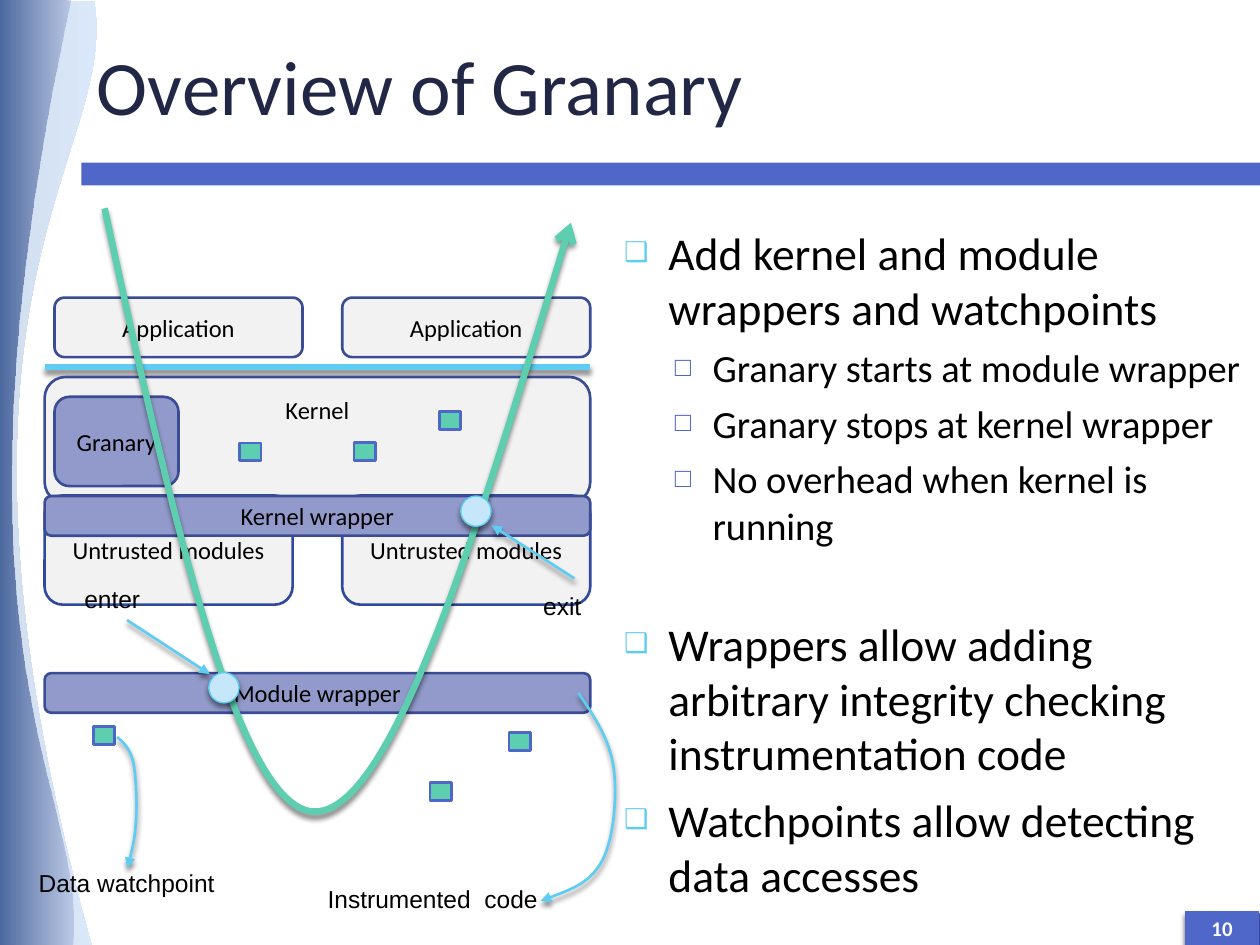
import pptx
import pptx.dml.color
import pptx.enum.shapes
import pptx.enum.text
import pptx.oxml
import pptx.oxml.ns
import pptx.util
import lxml.etree

Cm, Pt = pptx.util.Cm, pptx.util.Pt
RGBColor = pptx.dml.color.RGBColor
MSO_SHAPE = pptx.enum.shapes.MSO_SHAPE
PP_ALIGN = pptx.enum.text.PP_ALIGN
MSO_ANCHOR = pptx.enum.text.MSO_ANCHOR
qn = pptx.oxml.ns.qn

BLACK, WHITE = RGBColor(0, 0, 0), RGBColor(255, 255, 255)
NAVY = RGBColor(0x21, 0x27, 0x45)
BLUE = RGBColor(0x4E, 0x67, 0xC8)
PALE_BLUE = RGBColor(0xC2, 0xC7, 0xE6)
OUTLINE = RGBColor(0x3A, 0x4C, 0x94)
MODULE_OUTLINE = RGBColor(0x31, 0x48, 0x9F)
LAVENDER = RGBColor(0x91, 0x9A, 0xCA)
GRAY = RGBColor(0xF2, 0xF2, 0xF2)
SKY = RGBColor(0x5E, 0xCC, 0xF3)
PALE_SKY = RGBColor(0xC5, 0xE7, 0xF9)
GREEN = RGBColor(0x5D, 0xCE, 0xAF)
WAVE_DARK = RGBColor(0x00, 0x31, 0x71)
WAVE_LIGHT = RGBColor(0x65, 0xA8, 0xFF)
WAVE_INDIGO = RGBColor(0x37, 0x4A, 0x92)

TITLE = "Overview of Granary"
BULLETS = [
    (0, "Add kernel and module wrappers and watchpoints", 7),
    (1, "Granary starts at module wrapper", 5.5),
    (1, "Granary stops at kernel wrapper", 5.5),
    (1, "No overhead when kernel is running", 5.5),
    (0, "Wrappers allow adding arbitrary integrity checking instrumentation code", 39),
    (0, "Watchpoints allow detecting data accesses", 7),
]
LEVELS = [
    dict(size=26, margin=0.89, hanging=0.89, mark="❑", color=SKY, scale=60),
    dict(size=22, margin=1.78, hanging=0.76, mark="□", color=BLUE, scale=70),
]
LEFT, RIGHT = 0.9, 6.9
BOXES = [
    ("Kernel", (LEFT, 7.6, 11, 2.54), GRAY, OUTLINE),
    ("Granary", (1.1, 8, 2.5, 1.8), LAVENDER, OUTLINE),
    ("Untrusted modules", (RIGHT, 9.99, 5, 2.2), GRAY, MODULE_OUTLINE),
    ("Application", (1.1, 6, 5, 1.2), GRAY, OUTLINE),
    ("Application", (RIGHT, 6, 5, 1.2), GRAY, OUTLINE),
    ("Untrusted modules", (LEFT, 9.99, 5, 2.2), GRAY, MODULE_OUTLINE),
    ("Module wrapper", (LEFT, 13.57, 11, 0.8), LAVENDER, OUTLINE),
    ("Kernel wrapper", (LEFT, 10, 11, 0.8), LAVENDER, OUTLINE),
]
CROSSINGS = [(4.21, 13.56), (9.29, 10)]
WATCHPOINTS = [(8.86, 8.3), (7.14, 8.92), (4.83, 8.93), (10.26, 14.77), (8.67, 15.78), (1.88, 14.65)]
LABELS = [
    ("enter", (1.45, 11.64, 2.59, 1.02), PP_ALIGN.LEFT),
    ("exit", (10.7, 11.78, 2.79, 1.02), PP_ALIGN.LEFT),
    ("Instrumented  code", (6.31, 17.7, 4.83, 0.86), PP_ALIGN.CENTER),
    ("Data watchpoint", (0.14, 17.37, 4.83, 0.86), PP_ALIGN.CENTER),
]
BOUNDARY = ((LEFT, 7.4), (11.9, 7.4))
POINTERS = [((2.56, 12.5), (4.23, 13.59)), ((11.58, 11.66), (9.91, 10.59))]
EXECUTION = [(2.11, 4.2), (3.43, 10.26), (4.78, 16.31), (6.33, 16.36),
             (7.9, 16.41), (9.7, 10.44), (11.51, 4.49)]
CODE_ARROW = [(11.66, 13.97), (11.99, 14.45), (12.29, 14.91), (12.37, 15.47), (12.45, 16.05),
              (12.37, 16.92), (12.14, 17.35), (11.89, 17.81), (11.38, 17.98), (10.9, 18.16)]
DATA_ARROW = [(2.36, 14.86), (2.49, 14.96), (2.62, 15.09), (2.69, 15.37), (2.74, 15.65),
              (2.77, 16.21), (2.74, 16.56), (2.72, 16.92), (2.64, 17.22), (2.57, 17.5)]
WAVES = [
    ([(1.9, 0.03), (2.41, 3.23), (-1.85, 5.74), (1.88, 19.18)], [(WAVE_DARK, 21), (WAVE_LIGHT, 21)]),
    ([(1.42, 0), (-1.42, 13.44), (1.83, 15.95), (1.45, 19.15)], [(WAVE_DARK, 73), (WAVE_INDIGO, 17)]),
]


def lengths(values):
    return [Cm(value) for value in values]


def child(parent, tag, **attributes):
    return lxml.etree.SubElement(parent, qn(tag), {k: str(v) for k, v in attributes.items()})


def add_effects(shape, shadow):
    effects = child(shape._element.spPr, "a:effectLst")
    if shadow:
        outer = child(effects, "a:outerShdw", blurRad=Pt(3), dist=Pt(2.4), dir=5400000, rotWithShape=0)
        child(child(outer, "a:srgbClr", val="000000"), "a:alpha", val=45000)


def style_line(shape, color, width, arrow=None):
    shape.line.color.rgb = color
    shape.line.width = Pt(width)
    if arrow:
        child(shape.line._get_or_add_ln(), "a:tailEnd", type=arrow)


def add_box(kind, box, fill, line=None, width=1.5, shadow=False):
    shape = slide.shapes.add_shape(kind, *lengths(box))
    shape.fill.solid()
    shape.fill.fore_color.rgb = fill
    if line is None:
        shape.line.fill.background()
    else:
        style_line(shape, line, width)
    add_effects(shape, shadow)
    return shape


def write(shape, text, size, color=BLACK, font="Calibri", align=PP_ALIGN.CENTER, bold=False):
    frame = shape.text_frame
    frame.word_wrap = True
    frame.text = text
    paragraph = frame.paragraphs[0]
    paragraph.alignment = align
    style_font(paragraph, size, color, font, bold)


def style_font(paragraph, size, color, name="Calibri", bold=False):
    font = paragraph.font
    font.size, font.name, font.bold = Pt(size), name, bold
    font.color.rgb = color


def add_outline(controls, before=(), after=()):
    points = [lengths(point) for point in [*before, *controls, *after]]
    builder = slide.shapes.build_freeform(*points[0], scale=1.0)
    builder.add_line_segments(points[1:], close=bool(after))
    shape = builder.convert_to_shape()
    geometry = next(shape._element.iter(qn("a:path")))
    segments = geometry.findall(qn("a:lnTo"))[len(before):]
    for start in range(0, len(controls) - 1, 3):
        curve = lxml.etree.Element(qn("a:cubicBezTo"))
        segments[start].addprevious(curve)
        for segment in segments[start:start + 3]:
            curve.append(segment[0])
            geometry.remove(segment)
    return shape


def add_curve(controls, color, width, arrow):
    shape = add_outline(controls)
    shape.fill.background()
    style_line(shape, color, width, arrow)
    add_effects(shape, True)


def add_line(start, end, width, arrow=None):
    line = slide.shapes.add_connector(pptx.enum.shapes.MSO_CONNECTOR.STRAIGHT, *lengths(start + end))
    style_line(line, SKY, width, arrow)
    add_effects(line, True)


def place(shape, box):
    shape.left, shape.top, shape.width, shape.height = lengths(box)
    slide.shapes._spTree.append(shape._element)


presentation = pptx.Presentation()
presentation.slide_width, presentation.slide_height = Cm(25.4), Cm(19.05)
slide = presentation.slides.add_slide(presentation.slide_layouts[1])
title, body = slide.placeholders

add_box(MSO_SHAPE.RECTANGLE, (23.93, 18.42, 1.47, 0.63), PALE_BLUE, BLUE, 0.79, True)
add_box(MSO_SHAPE.RECTANGLE, (1.64, 3.28, 23.76, 0.46), BLUE)
for edge, colors in WAVES:
    wave = add_outline(edge, before=[(0, 0)], after=[(0, 19.18)])
    wave.fill.gradient()
    wave.fill.gradient_angle = 0
    for stop, (color, opacity) in zip(wave.fill.gradient_stops, colors):
        stop.color.rgb = color
        child(stop._gs[0], "a:alpha", val=opacity * 1000)
    wave.line.fill.background()
    add_effects(wave, False)

place(title, (1.7, 0.33, 22.66, 2.74))
write(title, TITLE, 44, NAVY, align=PP_ALIGN.LEFT)
title.text_frame.vertical_anchor = MSO_ANCHOR.MIDDLE

place(body, (12.33, 4.41, 12.98, 12.7))
body.text_frame.text = "\n".join(text for _, text, _ in BULLETS)
body.text_frame.auto_size = pptx.enum.text.MSO_AUTO_SIZE.NONE
for paragraph, (depth, _, gap) in zip(body.text_frame.paragraphs, BULLETS):
    level = LEVELS[depth]
    paragraph.level = depth
    paragraph.space_before = Pt(gap)
    properties = paragraph._p.get_or_add_pPr()
    properties.set("marL", str(Cm(level["margin"])))
    properties.set("indent", str(-Cm(level["hanging"])))
    child(child(properties, "a:buClr"), "a:srgbClr", val=level["color"])
    child(properties, "a:buSzPct", val=level["scale"] * 1000)
    child(properties, "a:buFont", typeface="Arial")
    child(properties, "a:buChar", char=level["mark"])
    style_font(paragraph, level["size"], BLACK)

number = add_box(MSO_SHAPE.RECTANGLE, (23.9, 18.37, 1.47, 0.68), BLUE, BLUE, 0.79, True)
write(number, "10", 11.9, WHITE, bold=True)

add_line(*BOUNDARY, 3.75)
for text, box, fill, line in BOXES:
    shape = add_box(MSO_SHAPE.ROUNDED_RECTANGLE, box, fill, line)
    write(shape, text, 14)
    if text == "Kernel":
        shape.text_frame.vertical_anchor = MSO_ANCHOR.TOP
        shape.text_frame.margin_top = Cm(0.25)
add_curve(EXECUTION, GREEN, 3.75, "arrow")
for x, y in CROSSINGS:
    add_box(MSO_SHAPE.OVAL, (x, y, 0.61, 0.61), PALE_SKY, SKY, 0.79, True)
for text, box, align in LABELS:
    write(slide.shapes.add_textbox(*lengths(box)), text, 14, font="Arial", align=align)
for start, end in POINTERS:
    add_line(start, end, 1.5, "triangle")
for x, y in WATCHPOINTS:
    add_box(MSO_SHAPE.RECTANGLE, (x, y, 0.43, 0.36), GREEN, BLUE)
for controls in (CODE_ARROW, DATA_ARROW):
    add_curve(controls, SKY, 1.5, "triangle")

presentation.save("out.pptx")
